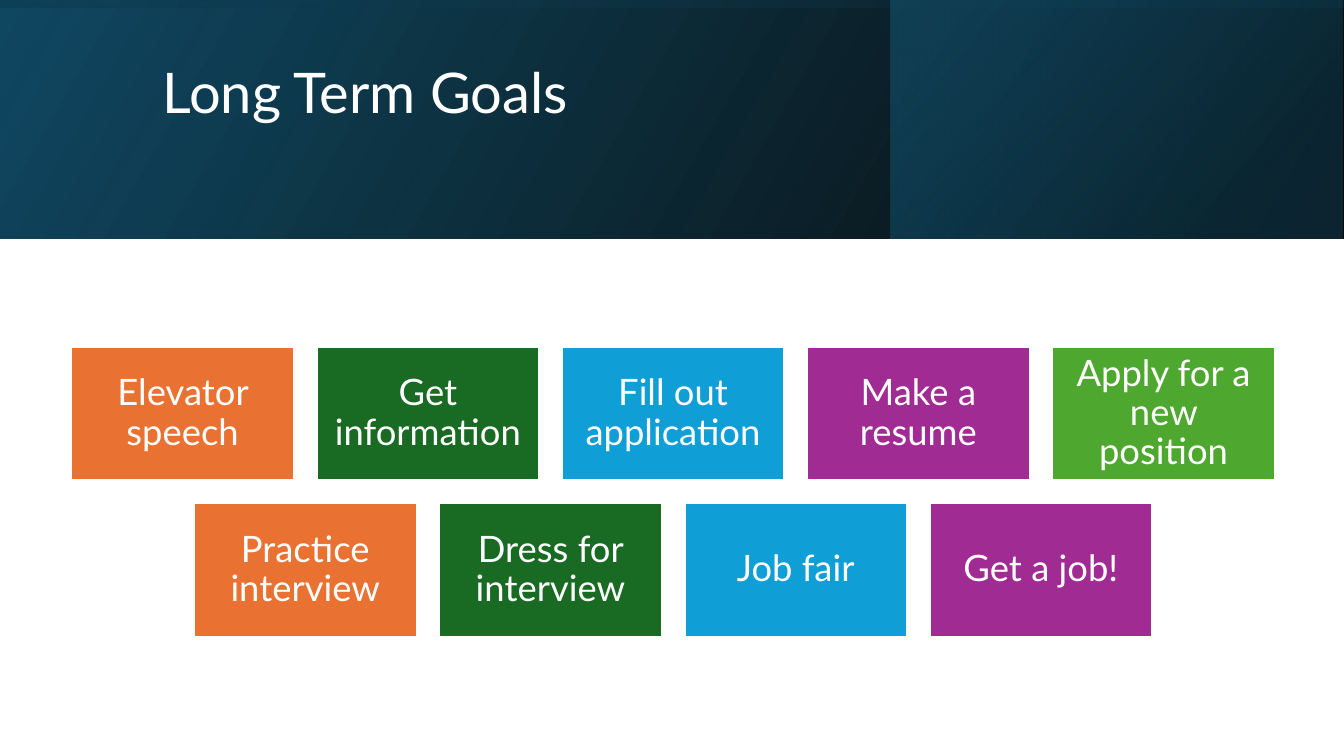
"""Build the Long Term Goals slide."""
from typing import NamedTuple

from lxml import etree
from pptx import Presentation
from pptx.dml.color import RGBColor
from pptx.enum.shapes import MSO_SHAPE
from pptx.enum.text import MSO_ANCHOR, MSO_AUTO_SIZE, PP_ALIGN
from pptx.oxml.ns import qn
from pptx.slide import Slide
from pptx.text.text import TextFrame
from pptx.util import Cm, Pt

RECT = MSO_SHAPE.RECTANGLE
TOP, MIDDLE = MSO_ANCHOR.TOP, MSO_ANCHOR.MIDDLE
LEFT, CENTER = PP_ALIGN.LEFT, PP_ALIGN.CENTER
NO_FIT = MSO_AUTO_SIZE.NONE

FONT = "Lato"
COLORS = {
    "white": "FFFFFF", "black": "000000", "navy": "104862",
    "deep": "0B3041", "teal": "156082", "orange": "E97132",
    "green": "196B24", "blue": "0F9ED5", "purple": "A02B93",
    "lime": "4EA72E",
}
CYCLE = ("orange", "green", "blue", "purple", "lime")
WIDTH, HEIGHT = 33.87, 19.05
TILE_W, TILE_H = 5.61, 3.37
STEP_X, STEP_Y = 6.18, 3.94
GRID_X, GRID_Y = 1.8, 8.74
INSET = 0.28


class Stop(NamedTuple):
    """One gradient stop, with place and opacity in percent."""
    place: int
    color: str
    alpha: int


class Band(NamedTuple):
    """One mirrored gradient layer of the header."""
    left: float
    top: float
    width: float
    height: float
    turn: int
    angle: int
    stops: tuple[Stop, Stop]


class Tile(NamedTuple):
    """One goal tile."""
    text: str
    color: str
    left: float
    top: float


BANDS = (
    Band(0, 0, WIDTH, 6.02, 0, 330,
         (Stop(0, "black", 96), Stop(100, "navy", 100))),
    Band(22.45, 0, 11.38, 6.02, 0, 320,
         (Stop(19, "deep", 68), Stop(100, "teal", 48))),
    Band(13.92, -13.92, 6.02, WIDTH, 270, 350,
         (Stop(23, "navy", 16), Stop(99, "black", 45))),
)
GOALS = (
    ("Elevator speech", "Get information", "Fill out application",
     "Make a resume", "Apply for a new position"),
    ("Practice interview", "Dress for interview", "Job fair", "Get a job!"),
)


def paint(name: str) -> RGBColor:
    """Return a named colour."""
    return RGBColor.from_string(COLORS[name])


def write(frame: TextFrame, text: str, size: float, align: PP_ALIGN) -> None:
    """Set and format white text in a frame."""
    frame.text = text
    frame.word_wrap = True
    frame.auto_size = NO_FIT
    para = frame.paragraphs[0]
    para.alignment = align
    para.line_spacing = 0.9
    font = para.runs[0].font
    font.name = FONT
    font.size = Pt(size)
    font.color.rgb = paint("white")


def draw_band(slide: Slide, band: Band) -> None:
    """Draw a header layer."""
    shape = slide.shapes.add_shape(
        RECT, Cm(band.left), Cm(band.top), Cm(band.width), Cm(band.height))
    shape.shadow.inherit = False
    shape.line.fill.background()
    shape.rotation = band.turn
    props = shape.element.spPr
    props.find(qn("a:xfrm")).set("flipH", "1")
    shape.fill.gradient()
    shape.fill.gradient_angle = 360 - band.angle
    for grad, stop in zip(shape.fill.gradient_stops, band.stops):
        grad.position = stop.place / 100
        grad.color.rgb = paint(stop.color)
    for node, stop in zip(props.iter(qn("a:srgbClr")), band.stops):
        etree.SubElement(node, qn("a:alpha")).set("val", str(stop.alpha * 1000))


def draw_title(slide: Slide) -> None:
    """Place the title above the header layers."""
    title = slide.shapes.title
    title.left, title.top = Cm(3.84), Cm(0.97)
    title.width, title.height = Cm(27), Cm(4.37)
    frame = title.text_frame
    write(frame, "Long Term Goals", 40, LEFT)
    frame.vertical_anchor = TOP
    frame.margin_top = Cm(0.66)
    title.element.getparent().append(title.element)


def draw_tile(slide: Slide, tile: Tile) -> None:
    """Draw a goal tile."""
    shape = slide.shapes.add_shape(
        RECT, Cm(tile.left), Cm(tile.top), Cm(TILE_W), Cm(TILE_H))
    shape.shadow.inherit = False
    shape.fill.solid()
    shape.fill.fore_color.rgb = paint(tile.color)
    shape.line.color.rgb = paint("white")
    shape.line.width = Pt(1.5)
    frame = shape.text_frame
    write(frame, tile.text, 26, CENTER)
    frame.vertical_anchor = MIDDLE
    frame.margin_left = frame.margin_right = Cm(INSET)
    frame.margin_top = frame.margin_bottom = Cm(INSET)


def main() -> None:
    """Build and save the slide."""
    deck = Presentation()
    deck.slide_width, deck.slide_height = Cm(WIDTH), Cm(HEIGHT)
    slide = deck.slides.add_slide(deck.slide_layouts[5])
    for band in BANDS:
        draw_band(slide, band)
    draw_title(slide)
    for row, goals in enumerate(GOALS):
        start = GRID_X + (len(CYCLE) - len(goals)) * STEP_X / 2
        for col, (text, color) in enumerate(zip(goals, CYCLE)):
            draw_tile(slide, Tile(text, color, start + col * STEP_X,
                                  GRID_Y + row * STEP_Y))
    deck.save("out.pptx")


if __name__ == "__main__":
    main()
